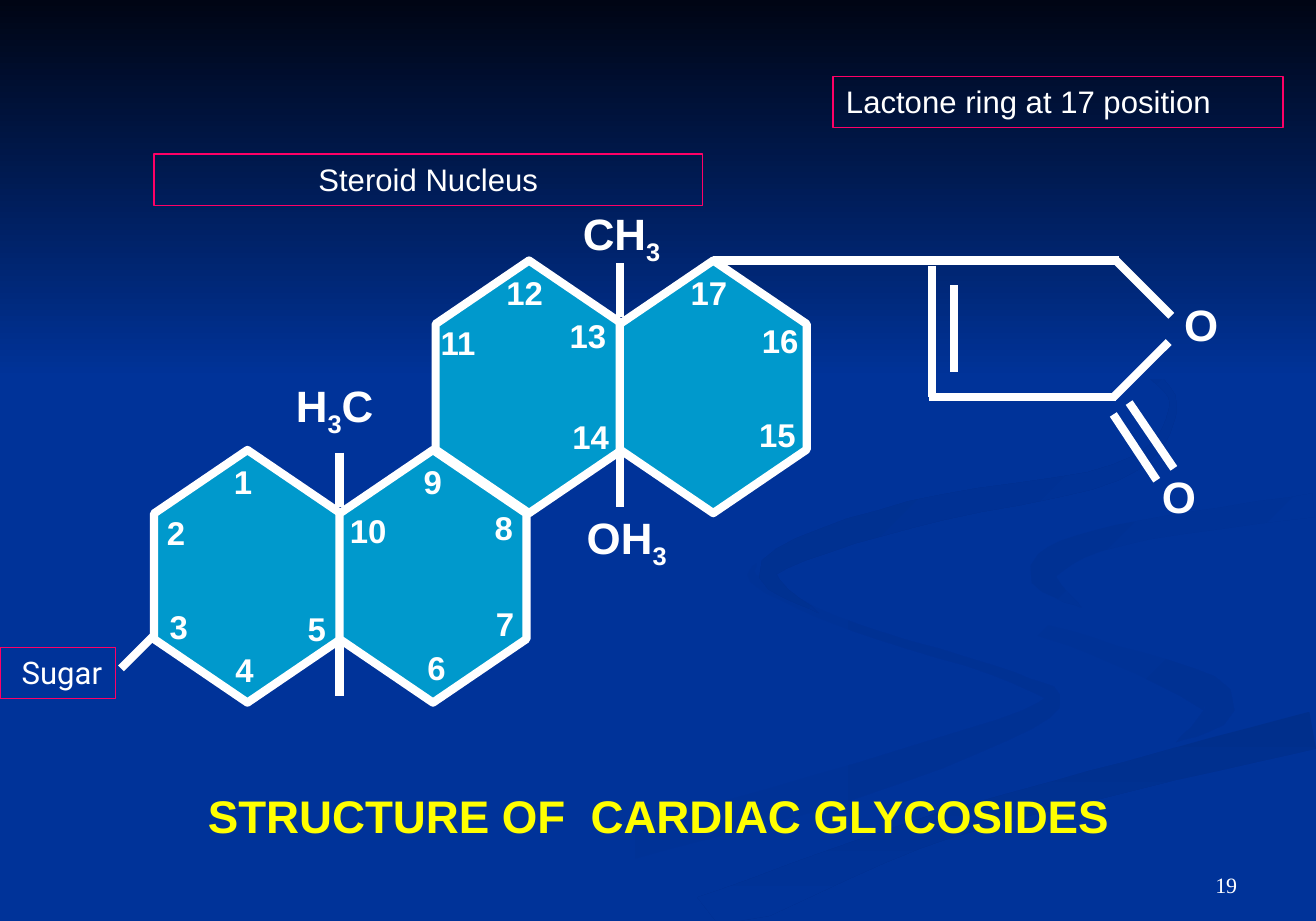
from dataclasses import dataclass
from math import hypot

from lxml import etree
from pptx import Presentation
from pptx import util as u
from pptx.dml.color import RGBColor
from pptx.enum import shapes, text
from pptx.oxml.ns import qn

PX = 9144
WIDTH, HEIGHT = 1000, 700
SKY_HEIGHT = 288
CURVE_STEPS = 6
RING_LENGTH, RING_BREADTH = 192, 142
STUB = 41


@dataclass(frozen=True)
class Theme:
    background: RGBColor = RGBColor.from_string("003399")
    sky: RGBColor = RGBColor.from_string("000514")
    ribbon_dark: RGBColor = RGBColor.from_string("002F8C")
    ribbon_soft: RGBColor = RGBColor.from_string("003193")
    ring: RGBColor = RGBColor.from_string("0099CC")
    ink: RGBColor = RGBColor.from_string("FFFFFF")
    frame: RGBColor = RGBColor.from_string("FF0066")
    title: RGBColor = RGBColor.from_string("FFFF00")
    font: str = "Arial"
    title_size: int = 25
    formula_size: int = 24
    number_size: int = 18
    caption_size: int = 17
    page_size: int = 12
    bond_width: float = 4.5
    frame_width: float = 0.75


T = Theme()


@dataclass(frozen=True)
class Run:
    words: str
    bold: bool = True
    font: str = T.font
    sub: bool = False


@dataclass(frozen=True)
class Label:
    box: tuple[int, int, int, int]
    runs: tuple[Run, ...]
    size: int
    color: RGBColor = T.ink
    align: text.PP_ALIGN = text.PP_ALIGN.LEFT
    anchor: text.MSO_ANCHOR = text.MSO_ANCHOR.TOP
    wrap: bool = False
    framed: bool = False


@dataclass(frozen=True)
class Ribbon:
    spine: tuple[tuple[int, int, int], ...]
    start: RGBColor
    end: RGBColor
    angle: int


RIBBONS = [
    Ribbon(((575, 428, 0), (577, 443, 4), (650, 477, 3), (770, 515, 4), (793, 540, 7), (655, 592, 13),
            (440, 653, 13), (331, 699, 25)), T.background, T.ribbon_soft, 0),
    Ribbon(((724, 433, 0), (745, 463, 4), (830, 491, 6), (925, 532, 13), (894, 564, 0)),
           T.background, T.ribbon_soft, 45),
    Ribbon(((537, 699, 18), (695, 635, 11), (830, 597, 11), (998, 555, 14)),
           T.ribbon_dark, T.background, 90),
    Ribbon(((822, 462, 0), (793, 434, 11), (850, 407, 8), (998, 384, 9)),
           T.ribbon_soft, T.background, 45),
    Ribbon(((762, 217, 0), (865, 277, 3), (891, 313, 3), (848, 359, 6), (692, 391, 10), (585, 431, 8),
            (622, 466, 0)), T.ribbon_dark, T.background, 45),
]

RINGS = [(92, 367), (233, 367), (306, 223), (446, 223)]
STUBS = [(471, 344), (471, 200), (258, 344), (258, 488)]
BONDS = [
    (542, 198, 850, 198), (708, 202, 708, 302), (706, 302, 848, 302), (848, 198, 890, 240),
    (846, 302, 888, 260), (725, 217, 725, 283), (846, 315, 879, 365), (858, 306, 892, 356),
    (117, 483, 92, 508), *((x, y, x, y + STUB) for x, y in STUBS),
]

CARBONS = [
    (168, 346), (117, 385), (119, 456), (169, 489), (224, 458), (315, 487), (367, 454), (366, 381),
    (312, 346), (256, 383), (325, 240), (375, 202), (423, 235), (425, 312), (567, 310), (569, 239),
    (515, 202),
]

THREE = Run("3", sub=True)
FORMULAS = [
    (890, 221, 46, (Run("O"),)),
    (873, 352, 46, (Run("O"),)),
    (433, 152, 81, (Run("CH"), THREE)),
    (436, 383, 82, (Run("OH"), THREE)),
    (215, 283, 81, (Run("H"), THREE, Run("C"))),
]

TITLE = Label((148, 594, 708, 52), (Run("STRUCTURE OF  CARDIAC GLYCOSIDES"),), T.title_size, T.title)
LABELS = [
    *(Label((x, y, width, 50), runs, T.formula_size) for x, y, width, runs in FORMULAS),
    *(Label((x, y, 34 if n < 10 else 48, 40), (Run(str(n)),), T.number_size)
      for n, (x, y) in enumerate(CARBONS, 1)),
    Label((0, 492, 88, 39), (Run(" "), Run("Sugar", False, "Roboto")), T.caption_size, framed=True),
    Label((633, 58, 342, 39), (Run("Lactone ring at 17 position", False),), T.caption_size,
          wrap=True, framed=True),
    Label((117, 117, 417, 39), (Run("Steroid Nucleus", False),), T.caption_size,
          align=text.PP_ALIGN.CENTER, wrap=True, framed=True),
    Label((717, 638, 233, 49), (Run("19", False, "Times New Roman"),), T.page_size,
          align=text.PP_ALIGN.RIGHT, anchor=text.MSO_ANCHOR.BOTTOM, wrap=True),
]


def emu(*lengths: int) -> list[int]:
    return [n * PX for n in lengths]


def smooth(nodes: tuple) -> list[tuple]:
    padded = [nodes[0], *nodes, nodes[-1]]
    curve = []
    for quad in zip(padded, padded[1:], padded[2:], padded[3:]):
        for step in range(CURVE_STEPS):
            t = step / CURVE_STEPS
            curve.append(tuple(
                b + t * (c - a) / 2 + t ** 2 * (a - 2.5 * b + 2 * c - d / 2)
                + t ** 3 * (3 * (b - c) + d - a) / 2
                for a, b, c, d in zip(*quad)))
    return [*curve, nodes[-1]]


def outline(spine: tuple) -> list[tuple[int, int]]:
    curve = smooth(spine)
    sides = [], []
    for before, (x, y, half), after in zip([curve[0], *curve], curve, [*curve[1:], curve[-1]]):
        dx, dy = after[0] - before[0], after[1] - before[1]
        reach = max(half, 0) / hypot(dx, dy)
        for side, sign in zip(sides, (1, -1)):
            side.append((min(round(x - sign * dy * reach), WIDTH),
                         min(round(y + sign * dx * reach), HEIGHT)))
    return sides[0] + sides[1][::-1]


def shade(sp, start: RGBColor, end: RGBColor, angle: int) -> None:
    sp.shadow.inherit = False
    sp.line.fill.background()
    sp.fill.gradient()
    sp.fill.gradient_angle = -angle % 360
    for stop, color in zip(sp.fill.gradient_stops, (start, end)):
        stop.color.rgb = color


def draw_ribbon(s, ribbon: Ribbon) -> None:
    points = outline(ribbon.spine)
    builder = s.shapes.build_freeform(*points[0], scale=PX)
    builder.add_line_segments(points[1:], close=True)
    shade(builder.convert_to_shape(), ribbon.start, ribbon.end, ribbon.angle)


def draw_ring(s, x: int, y: int) -> None:
    sp = s.shapes.add_shape(shapes.MSO_SHAPE.HEXAGON, *emu(x, y, RING_LENGTH, RING_BREADTH))
    sp.adjustments[0] = 0.34
    sp.rotation = 90
    sp.shadow.inherit = False
    sp.fill.solid()
    sp.fill.fore_color.rgb = T.ring
    sp.line.color.rgb = T.ink
    sp.line.width = u.Pt(T.bond_width)


def draw_bond(s, ends: tuple[int, int, int, int]) -> None:
    bond = s.shapes.add_connector(shapes.MSO_CONNECTOR.STRAIGHT, *emu(*ends))
    bond.line.color.rgb = T.ink
    bond.line.width = u.Pt(T.bond_width)
    etree.SubElement(bond._element.spPr, qn("a:effectLst"))


def write_label(sp, label: Label) -> None:
    sp.left, sp.top, sp.width, sp.height = emu(*label.box)
    tf = sp.text_frame
    tf.word_wrap = label.wrap
    tf.auto_size = text.MSO_AUTO_SIZE.NONE
    tf.vertical_anchor = label.anchor
    p = tf.paragraphs[0]
    p.alignment = label.align
    for run in label.runs:
        r = p.add_run()
        r.text = run.words
        r.font.name = run.font
        r.font.size = u.Pt(label.size)
        r.font.bold = run.bold
        r.font.color.rgb = label.color
        if run.sub:
            r._r.get_or_add_rPr().set("baseline", "-25000")
    if label.framed:
        sp.line.color.rgb = T.frame
        sp.line.width = u.Pt(T.frame_width)


def main() -> None:
    prs = Presentation()
    prs.slide_width, prs.slide_height = emu(WIDTH, HEIGHT)
    s = prs.slides.add_slide(prs.slide_layouts[5])
    s.background.fill.solid()
    s.background.fill.fore_color.rgb = T.background
    for ribbon in RIBBONS:
        draw_ribbon(s, ribbon)
    sky = s.shapes.add_shape(shapes.MSO_SHAPE.RECTANGLE, *emu(0, 0, WIDTH, SKY_HEIGHT))
    shade(sky, T.sky, T.background, 90)
    for x, y in RINGS:
        draw_ring(s, x, y)
    for ends in BONDS:
        draw_bond(s, ends)
    for label in LABELS:
        write_label(s.shapes.add_textbox(*emu(*label.box)), label)
    title = s.shapes.title
    write_label(title, TITLE)
    s.shapes._spTree.append(title._element)
    prs.save("out.pptx")


if __name__ == "__main__":
    main()
